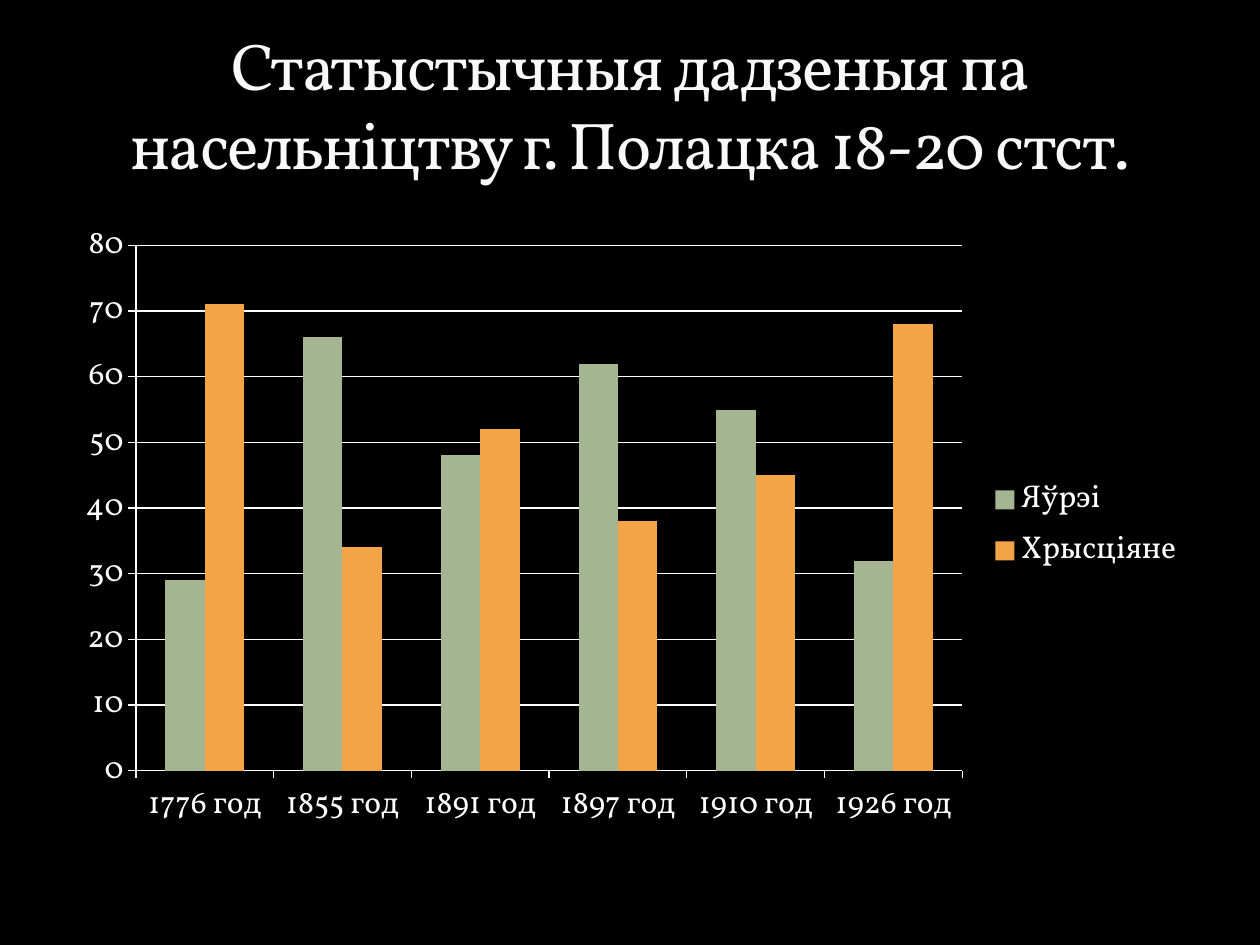
from dataclasses import dataclass

from lxml.etree import SubElement
from pptx import Presentation
from pptx.chart.data import CategoryChartData
from pptx.dml.color import RGBColor
from pptx.enum.chart import XL_CHART_TYPE, XL_LEGEND_POSITION, XL_TICK_MARK
from pptx.enum.text import MSO_ANCHOR, PP_ALIGN
from pptx.oxml.ns import qn
from pptx.util import Inches, Pt


@dataclass(frozen=True)
class Theme:
    font: str = "Vollkorn"
    background: str = "000000"
    title: str = "F9F9F9"
    title_outline: str = "3C4422"
    chart_text: str = "FFFFFF"
    series: tuple = ("A5B592", "F3A447")
    title_size: float = 37.8
    chart_size: float = 18


THEME = Theme()
TITLE = "Статыстычныя дадзеныя па насельніцтву г. Полацка 18-20 стст."
YEARS = (1776, 1855, 1891, 1897, 1910, 1926)
POPULATION = {
    "Яўрэі": (29, 66, 48, 62, 55, 32),
    "Хрысціяне": (71, 34, 52, 38, 45, 68),
}


def color(hex_value):
    return RGBColor.from_string(hex_value)


def style_font(font, size, hex_value):
    font.name = THEME.font
    font.size = Pt(size)
    font.color.rgb = color(hex_value)


def outline_text(r):
    """Tighten the letters and give them a thin, faint outline."""
    props = r.font._element if hasattr(r.font, "_element") else r._r.get_or_add_rPr()
    props.set("spc", "-100")
    ln = props.makeelement(qn("a:ln"), {"w": str(Pt(0.25))})
    props.insert(0, ln)
    fill = SubElement(ln, qn("a:solidFill"))
    rgb = SubElement(fill, qn("a:srgbClr"), val=THEME.title_outline)
    SubElement(rgb, qn("a:alpha"), val="25000")


def add_title(s):
    sp = s.shapes.add_textbox(Inches(0.5), Inches(0.17), Inches(9), Inches(1.33))
    tf = sp.text_frame
    tf.word_wrap = True
    tf.vertical_anchor = MSO_ANCHOR.BOTTOM
    tf.text = TITLE
    p = tf.paragraphs[0]
    p.alignment = PP_ALIGN.CENTER
    r = p.runs[0]
    style_font(r.font, THEME.title_size, THEME.title)
    outline_text(r)


def style_line(line):
    line.color.rgb = color(THEME.chart_text)
    line.width = Pt(0.75)


def add_population_chart(s):
    data = CategoryChartData()
    data.categories = [f"{year} год" for year in YEARS]
    for name, values in POPULATION.items():
        data.add_series(name, values)
    chart = s.shapes.add_chart(
        XL_CHART_TYPE.COLUMN_CLUSTERED,
        Inches(0.5), Inches(1.67), Inches(9), Inches(5), data,
    ).chart
    style_font(chart.font, THEME.chart_size, THEME.chart_text)
    chart.has_title = False
    chart.has_legend = True
    chart.legend.position = XL_LEGEND_POSITION.RIGHT
    chart.legend.include_in_layout = False

    for axis in (chart.category_axis, chart.value_axis):
        axis.major_tick_mark = XL_TICK_MARK.OUTSIDE
        axis.minor_tick_mark = XL_TICK_MARK.NONE
        style_line(axis.format.line)
    chart.value_axis.minimum_scale = 0
    chart.value_axis.maximum_scale = 80
    chart.value_axis.major_unit = 10
    chart.value_axis.has_major_gridlines = True
    style_line(chart.value_axis.major_gridlines.format.line)

    plot = chart.plots[0]
    plot.vary_by_categories = False
    plot.gap_width = 150
    plot.overlap = 0
    for series, hex_value in zip(plot.series, THEME.series):
        series.format.fill.solid()
        series.format.fill.fore_color.rgb = color(hex_value)


def main():
    prs = Presentation()
    prs.slide_width, prs.slide_height = Inches(10), Inches(7.5)
    s = prs.slides.add_slide(prs.slide_layouts[6])
    s.background.fill.solid()
    s.background.fill.fore_color.rgb = color(THEME.background)
    add_population_chart(s)
    add_title(s)
    prs.save("out.pptx")


if __name__ == "__main__":
    main()
